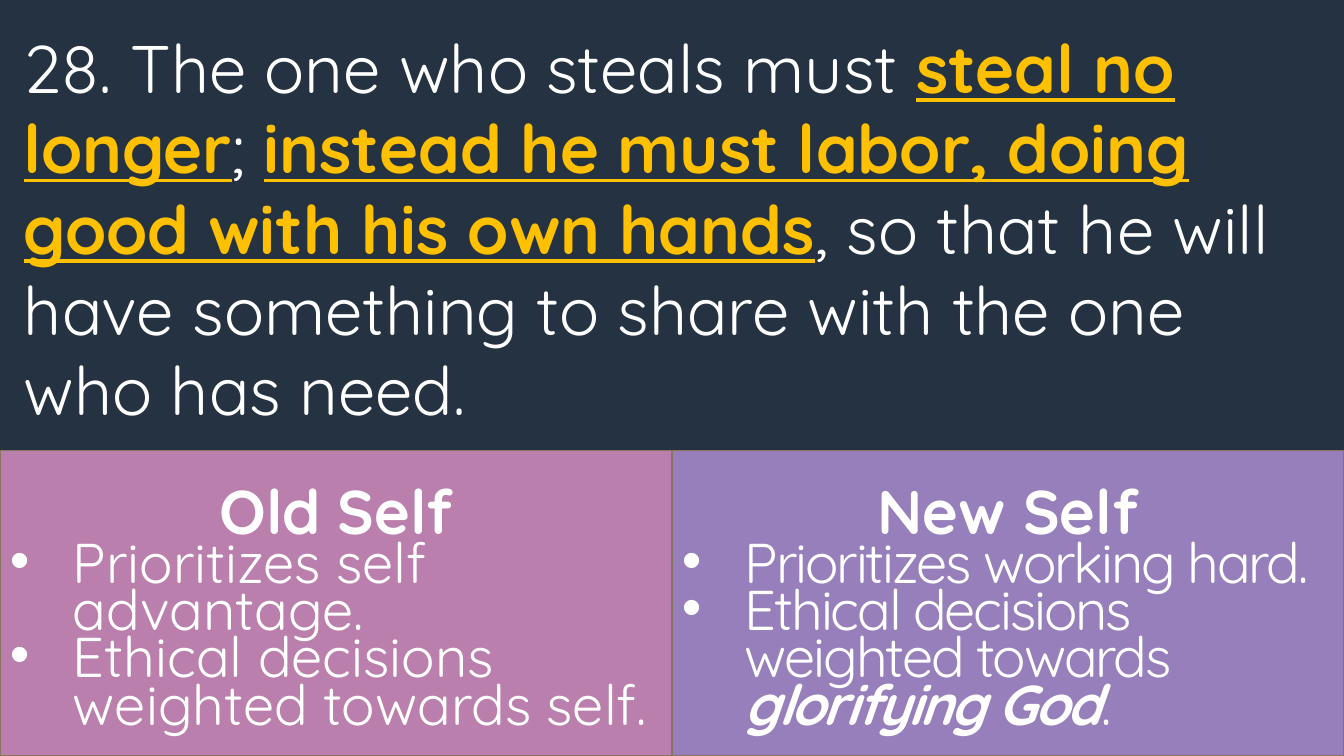
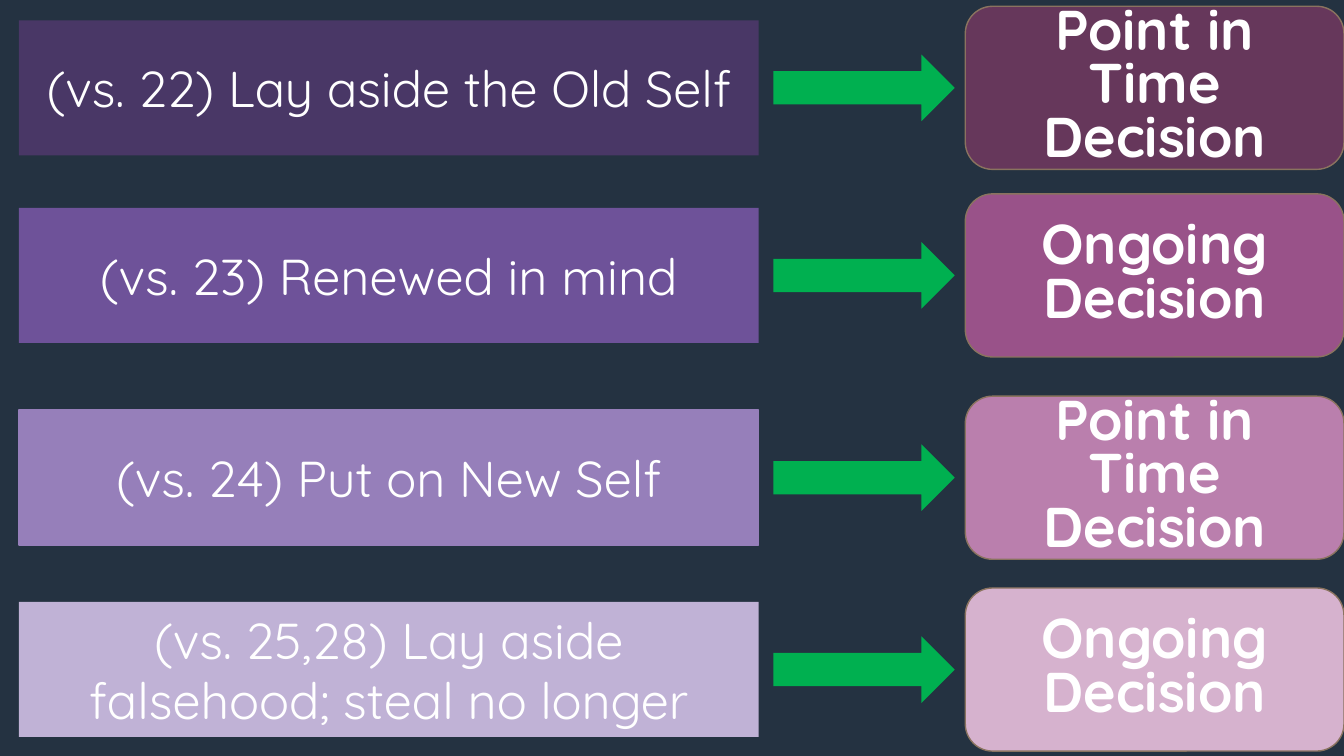
import pptx
import pptx.util
import pptx.dml.color
import pptx.enum.shapes
import pptx.enum.text
import pptx.oxml

Pt = pptx.util.Pt
RGBColor = pptx.dml.color.RGBColor
Shape = pptx.enum.shapes.MSO_SHAPE
Align = pptx.enum.text.PP_ALIGN
Anchor = pptx.enum.text.MSO_ANCHOR

NAVY = RGBColor(0x24, 0x32, 0x41)
WHITE = RGBColor(0xFF, 0xFF, 0xFF)
GOLD = RGBColor(0xFF, 0xC0, 0x00)
GREEN = RGBColor(0x00, 0xB0, 0x50)
TAUPE = RGBColor(0x8A, 0x73, 0x5F)
PLUM = RGBColor(0x49, 0x37, 0x66)
VIOLET = RGBColor(0x6E, 0x52, 0x99)
LAVENDER = RGBColor(0x96, 0x7F, 0xBA)
LILAC = RGBColor(0xC0, 0xB2, 0xD6)
WINE = RGBColor(0x66, 0x37, 0x5B)
MAGENTA = RGBColor(0x99, 0x52, 0x89)
PINK = RGBColor(0xBA, 0x7F, 0xAD)
BLUSH = RGBColor(0xD6, 0xB2, 0xCE)

FONT = "Quicksand"
WIDTH, HEIGHT = 960, 540
PANEL_TOP = 322
BULLET_INDENT = 45

VERSE = [
    ("28. The one who steals must ", False),
    ("steal no longer", True),
    ("; ", False),
    ("instead he must labor, doing good with his own hands", True),
    (", so that he will have something to share with the one who has need.", False),
]
OLD_SELF = [
    [("Prioritizes self advantage.", False)],
    [("Ethical decisions weighted towards self.", False)],
]
NEW_SELF = [
    [("Prioritizes working hard.", False)],
    [("Ethical decisions weighted towards ", False), ("glorifying God", True), (".", False)],
]
POINT = ["Point in Time", "Decision"]
ONGOING = ["Ongoing", "Decision"]
ROWS = [
    (4.5, "(vs. 22) Lay aside the Old Self", PLUM, None, POINT, WINE),
    (138.5, "(vs. 23) Renewed in mind", VIOLET, None, ONGOING, MAGENTA),
    (283, "(vs. 24) Put on New Self", LAVENDER, LAVENDER, POINT, PINK),
    (420, "(vs. 25,28) Lay aside falsehood; steal no longer", LILAC, None, ONGOING, BLUSH),
]
ROW_HEIGHT = 116.5


def add_slide(presentation):
    slide = presentation.slides.add_slide(presentation.slide_layouts[6])
    slide.background.fill.solid()
    slide.background.fill.fore_color.rgb = NAVY
    return slide


def add_box(slide, kind, left, top, width, height, fill, outline=None):
    shape = slide.shapes.add_shape(kind, Pt(left), Pt(top), Pt(width), Pt(height))
    shape.shadow.inherit = False
    shape.fill.solid()
    shape.fill.fore_color.rgb = fill
    if outline is None:
        shape.line.fill.background()
    else:
        shape.line.color.rgb = outline
        shape.line.width = Pt(1)
    shape.text_frame.word_wrap = True
    shape.text_frame.vertical_anchor = Anchor.MIDDLE
    return shape


def set_font(font, size, bold=False, color=WHITE):
    font.name = FONT
    font.size = Pt(size)
    font.bold = bold
    font.color.rgb = color


def write_lines(shape, lines, size, bold=False, spacing=None):
    frame = shape.text_frame
    for index, line in enumerate(lines):
        paragraph = frame.add_paragraph() if index else frame.paragraphs[0]
        paragraph.text = line
        paragraph.alignment = Align.CENTER
        paragraph.line_spacing = spacing
        set_font(paragraph.font, size, bold)


def add_bullet(paragraph):
    properties = paragraph._p.get_or_add_pPr()
    properties.set("marL", str(Pt(BULLET_INDENT)))
    properties.set("indent", str(-Pt(BULLET_INDENT)))
    for tag, attribute in (("buFont", 'typeface="Arial"'), ("buChar", 'char="•"')):
        namespace = "http://schemas.openxmlformats.org/drawingml/2006/main"
        properties.append(pptx.oxml.parse_xml(f'<a:{tag} xmlns:a="{namespace}" {attribute}/>'))


def add_verse(slide, left, top, width, height):
    frame = slide.shapes.add_textbox(Pt(left), Pt(top), Pt(width), Pt(height)).text_frame
    frame.word_wrap = True
    paragraph = frame.paragraphs[0]
    for text, stressed in VERSE:
        run = paragraph.add_run()
        run.text = text
        set_font(run.font, 48, stressed, GOLD if stressed else WHITE)
        run.font.underline = stressed


def add_self_panel(slide, left, top, width, height, title, points, fill, tracking=0):
    panel = add_box(slide, Shape.RECTANGLE, left, top, width, height, fill, TAUPE)
    write_lines(panel, [title], 44, True)
    for point in points:
        paragraph = panel.text_frame.add_paragraph()
        add_bullet(paragraph)
        paragraph.alignment = Align.LEFT
        paragraph.line_spacing = 0.7
        for text, stressed in point:
            run = paragraph.add_run()
            run.text = text
            set_font(run.font, 40, stressed)
            run.font.italic = stressed
            if tracking:
                run._r.get_or_add_rPr().set("spc", str(int(tracking * 100)))


def add_decision_row(slide, top, step, step_fill, step_outline, decision, decision_fill):
    def centred(kind, left, width, height, fill, outline=None):
        offset = (ROW_HEIGHT - height) / 2
        return add_box(slide, kind, left, top + offset, width, height, fill, outline)

    step_box = centred(Shape.RECTANGLE, 13.5, 528.5, 96.5, step_fill, step_outline)
    write_lines(step_box, [step], 36)
    centred(Shape.RIGHT_ARROW, 552.5, 129.5, 47.5, GREEN)
    decision_box = centred(Shape.ROUNDED_RECTANGLE, 689.5, 270.5, ROW_HEIGHT, decision_fill, TAUPE)
    write_lines(decision_box, decision, 40, True, 0.8)


def build_verse_slide(presentation):
    slide = add_slide(presentation)
    add_verse(slide, 10, 15, 936, 298)
    half, height = WIDTH / 2, HEIGHT - PANEL_TOP
    add_self_panel(slide, 0, PANEL_TOP, half, height, "Old Self", OLD_SELF, PINK)
    add_self_panel(slide, half, PANEL_TOP, half, height, "New Self", NEW_SELF, LAVENDER, -1.5)


def build_decision_slide(presentation):
    slide = add_slide(presentation)
    for row in ROWS:
        add_decision_row(slide, *row)


def main():
    presentation = pptx.Presentation()
    presentation.slide_width = Pt(WIDTH)
    presentation.slide_height = Pt(HEIGHT)
    build_verse_slide(presentation)
    build_decision_slide(presentation)
    presentation.save("out.pptx")


if __name__ == "__main__":
    main()
